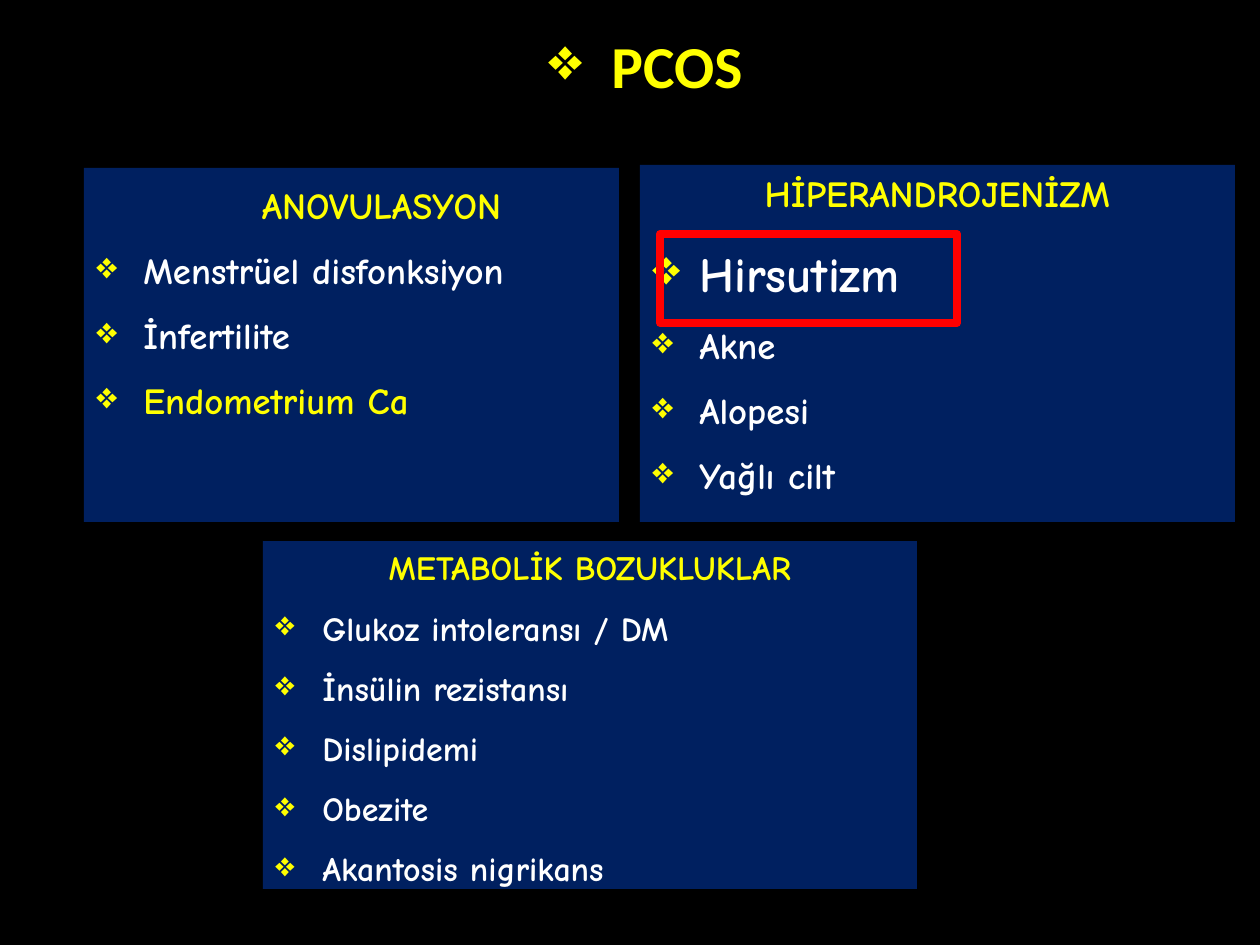
from lxml import etree
from pptx import Presentation
from pptx import util as u
from pptx.dml.color import RGBColor
from pptx.enum import shapes, text
from pptx.oxml.ns import qn

PX = 914400 // 126
COLORS = {"back": "000000", "panel": "002060", "accent": "FFFF00",
          "body": "FFFFFF", "frame": "FF0000"}
BULLET = "❖"
HANG = 47
TITLE = {"text": "PCOS", "at": (115, -14, 1061, 158), "size": 34, "hang": 63}
PANELS = [
    {"at": (84, 168, 535, 354), "size": 21, "top": 15, "shift": 60,
     "heading": "ANOVULASYON",
     "items": ["Menstrüel disfonksiyon", "İnfertilite", "Endometrium Ca"]},
    {"at": (640, 165, 595, 357), "size": 21, "top": 6, "shift": 0,
     "heading": "HİPERANDROJENİZM",
     "items": ["Hirsutizm", "Akne", "Alopesi", "Yağlı cilt"]},
    {"at": (263, 541, 654, 348), "size": 19.4, "top": 6, "shift": 0,
     "heading": "METABOLİK BOZUKLUKLAR",
     "items": ["Glukoz intoleransı / DM", "İnsülin rezistansı", "Dislipidemi",
               "Obezite", "Akantosis nigrikans"]},
]
SPECIAL_SIZES = {"Hirsutizm": 28}
SPECIAL_COLORS = {"Endometrium Ca": "accent"}
FRAME = (660, 234, 297, 89)


def color(name):
    return RGBColor.from_string(COLORS[name])


def scaled(lengths):
    return [length * PX for length in lengths]


def indent(para, left, first):
    props = para._p.get_or_add_pPr()
    props.set("marL", str(left * PX))
    props.set("indent", str(first * PX))
    return props


def add_bullet(para, hang):
    props = indent(para, hang, -hang)
    tint = etree.SubElement(props, qn("a:buClr"))
    etree.SubElement(tint, qn("a:srgbClr"), val=COLORS["accent"])
    etree.SubElement(props, qn("a:buChar"), char=BULLET)


def write(para, words, size, font, tint):
    para.text = words
    for span in para.runs:
        span.font.size = u.Pt(size)
        span.font.name = font
        span.font.bold = True
        span.font.color.rgb = color(tint)


def add_box(page, at):
    box = page.shapes.add_shape(shapes.MSO_SHAPE.RECTANGLE, *scaled(at))
    box.shadow.inherit = False
    return box


def add_title(page):
    title = page.shapes.title
    title.left, title.top, title.width, title.height = scaled(TITLE["at"])
    title.text_frame.vertical_anchor = text.MSO_ANCHOR.MIDDLE
    para = title.text_frame.paragraphs[0]
    write(para, TITLE["text"], TITLE["size"], "Calibri", "accent")
    para.alignment = text.PP_ALIGN.CENTER
    add_bullet(para, TITLE["hang"])


def add_panel(page, panel):
    box = add_box(page, panel["at"])
    box.fill.solid()
    box.fill.fore_color.rgb = color("panel")
    box.line.fill.background()
    frame = box.text_frame
    frame.word_wrap = True
    frame.vertical_anchor = text.MSO_ANCHOR.TOP
    frame.margin_top = panel["top"] * PX
    heading = frame.paragraphs[0]
    write(heading, panel["heading"], panel["size"], "Comic Neue", "accent")
    heading.alignment = text.PP_ALIGN.CENTER
    indent(heading, panel["shift"], 0)
    for item in panel["items"]:
        para = frame.add_paragraph()
        size = SPECIAL_SIZES.get(item, panel["size"])
        write(para, item, size, "Comic Neue", SPECIAL_COLORS.get(item, "body"))
        para.alignment = text.PP_ALIGN.LEFT
        para.space_before = u.Pt(round(size * 0.57, 1))
        add_bullet(para, HANG)


def main():
    deck = Presentation()
    deck.slide_width, deck.slide_height = scaled((1260, 945))
    page = deck.slides.add_slide(deck.slide_layouts[5])
    page.background.fill.solid()
    page.background.fill.fore_color.rgb = color("back")
    add_title(page)
    for panel in PANELS:
        add_panel(page, panel)
    frame = add_box(page, FRAME)
    frame.fill.background()
    frame.line.color.rgb = color("frame")
    frame.line.width = u.Pt(4.5)
    deck.save("out.pptx")


if __name__ == "__main__":
    main()
